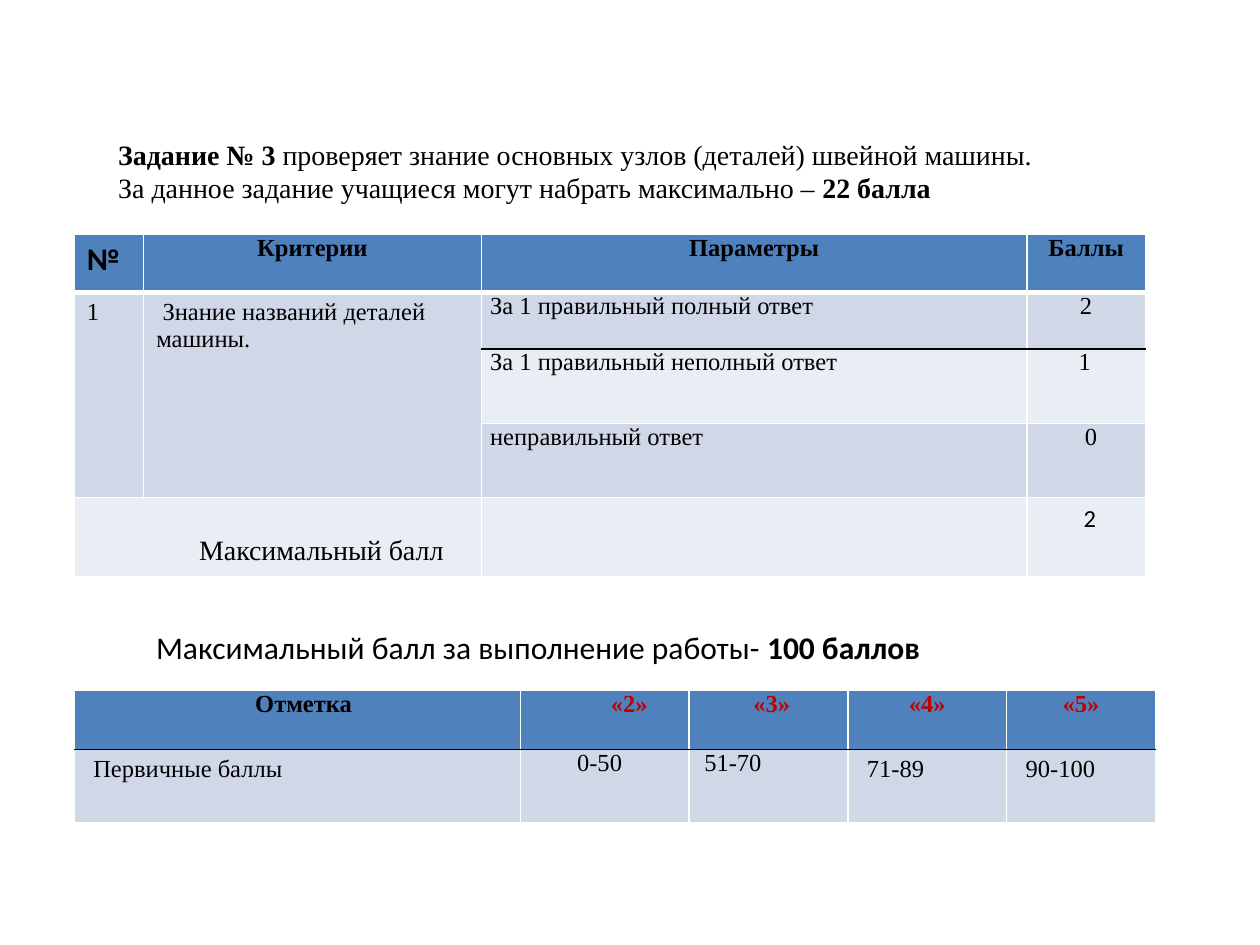
import dataclasses

import lxml.etree
import pptx
import pptx.dml.color
import pptx.enum.text
import pptx.oxml.ns
import pptx.util

Inches = pptx.util.Inches
Pt = pptx.util.Pt
ALIGN = pptx.enum.text.PP_ALIGN
qn = pptx.oxml.ns.qn


@dataclasses.dataclass(frozen=True)
class Theme:
    serif: str = "Times New Roman"
    sans: str = "Calibri"
    black: str = "000000"
    white: str = "FFFFFF"
    red: str = "C00000"
    header: str = "4F81BD"
    dark_band: str = "D0D8E8"
    light_band: str = "E9EDF4"
    cell_size: int = 14
    text_size: int = 16
    large_size: int = 18
    thin: float = 1
    thick: float = 3


THEME = Theme()


@dataclasses.dataclass
class Cell:
    text: str = ""
    bold: bool = False
    centered: bool = False
    color: str = THEME.black
    font: str = THEME.serif
    size: int = THEME.cell_size
    side: float = 0.07
    top: float = 0
    left: float = 0
    first_line: float = 0


def roomy(text, **options):
    return Cell(text, **{"side": 0.1, "top": 0.05, **options})


def heading(text, **options):
    return Cell(text, bold=True, centered=True, **options)


class SlideBuilder:
    def __init__(self, prs, theme):
        self.theme = theme
        self.s = prs.slides.add_slide(prs.slide_layouts[6])

    def run(self, p, text, font, size, bold=False, color=THEME.black):
        r = p.add_run()
        r.text = text
        formats = {"name": font, "size": Pt(size), "bold": bold}
        for name, value in formats.items():
            setattr(r.font, name, value)
        r.font.color.rgb = pptx.dml.color.RGBColor.from_string(color)

    def text(self, box, lines, font, size, anchor):
        sp = self.s.shapes.add_textbox(*map(Inches, box))
        tf = sp.text_frame
        formats = {
            "word_wrap": True,
            "auto_size": pptx.enum.text.MSO_AUTO_SIZE.NONE,
            "vertical_anchor": anchor,
        }
        for name, value in formats.items():
            setattr(tf, name, value)
        for i, line in enumerate(lines):
            p = tf.add_paragraph() if i else tf.paragraphs[0]
            for text, bold in line:
                self.run(p, text, font, size, bold)

    def border(self, cell, edge, color, width):
        tc_pr = cell._tc.get_or_add_tcPr()
        ln = lxml.etree.SubElement(tc_pr, qn("a:ln" + edge), w=str(Pt(width)))
        fill = lxml.etree.SubElement(ln, qn("a:solidFill"))
        lxml.etree.SubElement(fill, qn("a:srgbClr"), val=color)

    def fill_cell(self, cell, content, fill, above, below):
        plain = (self.theme.white, self.theme.thin)
        for edge, line in zip("LRTB", (plain, plain, above, below)):
            self.border(cell, edge, *line)
        cell.fill.solid()
        cell.fill.fore_color.rgb = pptx.dml.color.RGBColor.from_string(fill)
        formats = {
            "margin_left": Inches(content.side + content.left),
            "margin_right": Inches(content.side),
            "margin_top": Inches(content.top),
            "margin_bottom": Inches(min(content.top, 0.05)),
        }
        for name, value in formats.items():
            setattr(cell, name, value)
        p = cell.text_frame.paragraphs[0]
        p.alignment = ALIGN.CENTER if content.centered else ALIGN.LEFT
        if content.first_line:
            p._p.get_or_add_pPr().set("indent", str(Inches(content.first_line)))
        if content.text:
            self.run(p, content.text, content.font, content.size,
                     content.bold, content.color)

    def table(self, left, top, widths, heights, rows, fills, rules, merges=()):
        frame = self.s.shapes.add_table(
            len(heights), len(widths), Inches(left), Inches(top),
            Inches(sum(widths)), Inches(sum(heights)))
        tbl = frame.table
        for col, width in zip(tbl.columns, widths):
            col.width = Inches(width)
        for row, height in zip(tbl.rows, heights):
            row.height = Inches(height)
        plain = (self.theme.white, self.theme.thin)
        for i, row in enumerate(rows):
            for j, content in enumerate(row):
                above = rules.get((i - 1, j), plain)
                below = rules.get((i, j), plain)
                self.fill_cell(tbl.cell(i, j), content or Cell(), fills[i], above, below)
        for first, last in merges:
            tbl.cell(*first).merge(tbl.cell(*last))


def main():
    prs = pptx.Presentation()
    prs.slide_width, prs.slide_height = Inches(10), Inches(7.5)
    t = THEME
    slide = SlideBuilder(prs, t)
    anchors = pptx.enum.text.MSO_ANCHOR

    slide.text((0.84, 1.04, 8.03, 0.64), [
        [("Задание № 3 ", True),
         ("проверяет знание основных узлов (деталей) швейной машины.", False)],
        [("За данное задание учащиеся могут набрать максимально – ", False),
         ("22 балла", True)],
    ], t.serif, t.text_size, anchors.TOP)

    criteria = [
        [roomy("№", bold=True, font=t.sans, size=t.large_size),
         heading("Критерии", side=0.01), heading("Параметры"), heading("Баллы")],
        [roomy("1"), roomy("Знание названий деталей машины.", first_line=0.05),
         Cell("За 1 правильный полный ответ"), Cell("2", centered=True)],
        [None, None, Cell("За 1 правильный неполный ответ"), Cell("1", left=0.34)],
        [None, None, Cell("неправильный ответ"), Cell("0", left=0.39)],
        [roomy("Максимальный балл", size=t.text_size, top=0.3, left=0.89),
         None, Cell(), roomy("2", font=t.sans, left=0.35)],
    ]
    rules = {(0, j): (t.white, t.thick) for j in range(4)}
    rules.update({(1, j): (t.black, t.thin) for j in (2, 3)})
    slide.table(
        0.59, 1.86, [0.55, 2.68, 4.33, 0.94], [0.46, 0.45, 0.59, 0.59, 0.63],
        criteria,
        [t.header, t.dark_band, t.light_band, t.dark_band, t.light_band], rules,
        [((1, 0), (3, 0)), ((1, 1), (3, 1)), ((4, 0), (4, 1))])

    slide.text((1.14, 4.62, 7.09, 0.71), [
        [("Максимальный балл за выполнение работы- ", False), ("100 баллов", True)],
    ], t.sans, t.large_size, anchors.BOTTOM)

    marks = [
        [heading("Отметка", side=0.01, left=0.1),
         heading("«2»", color=t.red, side=0.01, left=0.39),
         heading("«3»", color=t.red, left=0.05),
         heading("«4»", color=t.red, side=0.01),
         heading("«5»", color=t.red, side=0.01)],
        [roomy("Первичные баллы", left=0.05),
         Cell("0-50", side=0.01, left=0.44), Cell("51-70", left=0.05),
         roomy("71-89", left=0.05), roomy("90-100", left=0.05)],
    ]
    slide.table(
        0.59, 5.48, [3.54, 1.34, 1.26, 1.26, 1.18], [0.47, 0.58], marks,
        [t.header, t.dark_band], {(0, j): (t.black, t.thin) for j in range(5)})

    prs.save("out.pptx")


if __name__ == "__main__":
    main()
